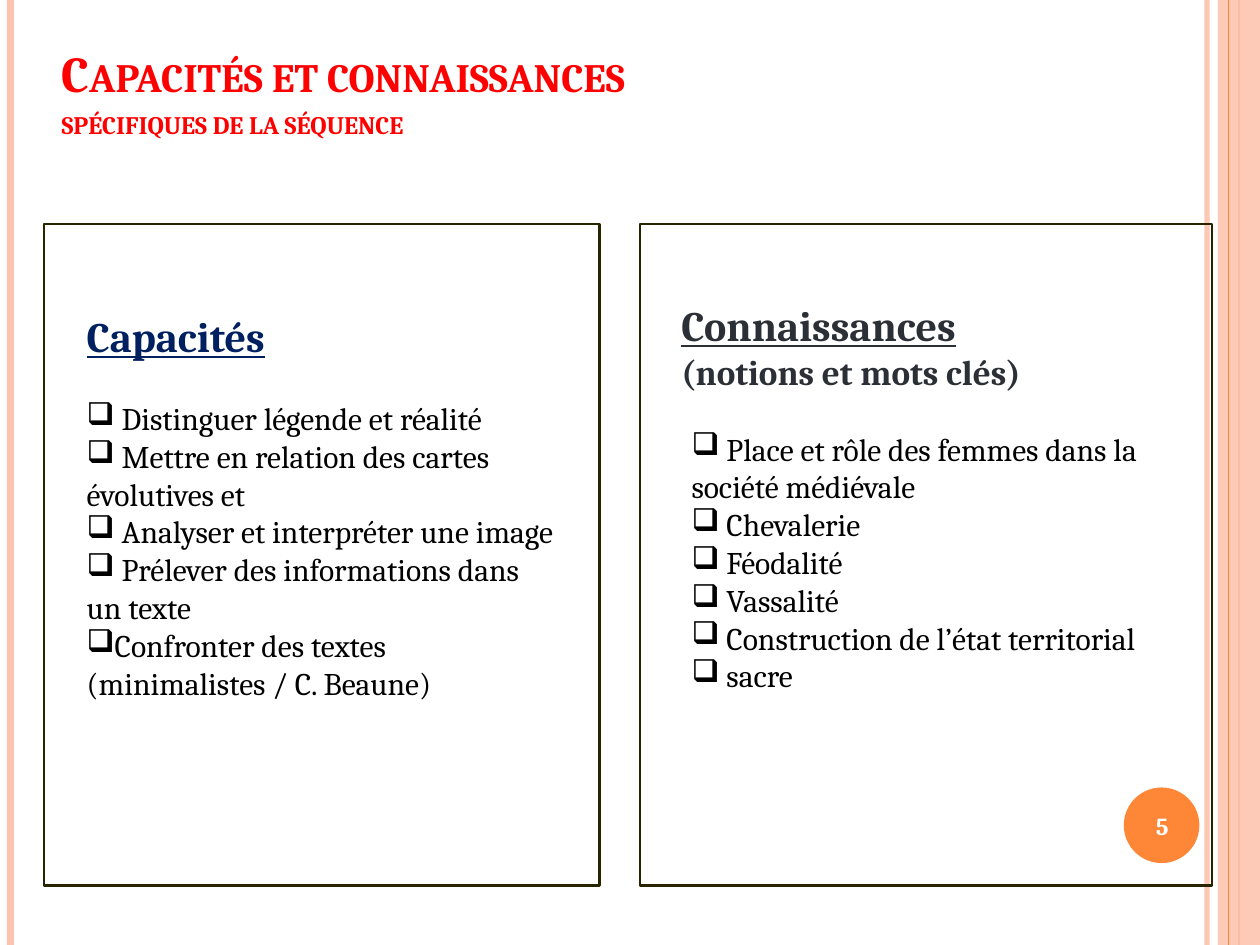
"""Build the slide on the skills and knowledge of a teaching sequence."""
from dataclasses import dataclass, field
from typing import NamedTuple, Optional

from lxml import etree
from pptx import Presentation
from pptx import util as u
from pptx.dml.color import RGBColor
from pptx.enum import shapes, text
from pptx.oxml.ns import qn


@dataclass(frozen=True)
class Theme:
    """Colours, font and type sizes of the slide."""
    family: str = "Cambria"
    peach: str = "FEC3AE"
    orange: str = "FE8637"
    frame: str = "292400"
    red: str = "FF0000"
    navy: str = "002060"
    slate: str = "2B2F36"
    black: str = "000000"
    white: str = "FFFFFF"
    title: float = 28.8
    heading: float = 24
    subheading: float = 20
    body: float = 18
    number: float = 14


class Box(NamedTuple):
    """Left, top, width and height in points."""
    left: float
    top: float
    width: float
    height: float


class Rule(NamedTuple):
    """A vertical rule over the full height."""
    x: float
    colour: str
    weight: float
    opacity: int = 100


class Line(NamedTuple):
    """A paragraph with its format."""
    words: str
    size: float
    colour: str
    bold: bool = False
    underline: bool = False
    small_caps: bool = False
    bullet: bool = False
    gap_after: float = 0


@dataclass(frozen=True)
class Passage:
    """A text box and its paragraphs."""
    box: Box
    lines: list[Line]
    frame: dict = field(default_factory=dict)
    align: Optional[text.PP_ALIGN] = None


THEME = Theme()
SLIDE = Box(0, 0, 720, 540)
PANEL_TOP, PANEL_HEIGHT = 128, 378

RULES = [
    Rule(689.8, THEME.peach, 3, 93),
    Rule(6, THEME.peach, 4.5),
    Rule(708, THEME.orange, 1.5),
]
INNER_RULE = Rule(702, THEME.orange, 0.75)
BAND = Box(696, 0, 24, SLIDE.height)
BADGE = Box(642.2, 450, 43.2, 43.2)
PANELS = [
    Box(25.2, PANEL_TOP, 317.5, PANEL_HEIGHT),
    Box(365.8, PANEL_TOP, 326.9, PANEL_HEIGHT),
]

SKILLS = [
    " Distinguer légende et réalité",
    " Mettre en relation des cartes évolutives et",
    " Analyser et interpréter une image",
    " Prélever des informations dans un texte",
    "Confronter des textes (minimalistes / C. Beaune)",
]
NOTIONS = [
    " Place et rôle des femmes dans la société médiévale",
    " Chevalerie",
    " Féodalité",
    " Vassalité",
    " Construction de l’état territorial",
    " sacre",
]


def bullets(items: list[str]) -> list[Line]:
    """Turn items into checklist lines."""
    return [Line(item, THEME.body, THEME.black, bullet=True) for item in items]


PASSAGES = [
    Passage(
        Box(28.1, 16.6, 648, 88.6),
        [
            Line("Capacités et connaissances", THEME.title, THEME.red, True, small_caps=True),
            Line("spécifiques de la séquence", THEME.body, THEME.red, True, small_caps=True),
        ],
        {"vertical_anchor": text.MSO_ANCHOR.BOTTOM, "margin_bottom": u.Pt(25)},
    ),
    Passage(
        Box(382.3, 167.8, 223.2, 60.5),
        [
            Line("Connaissances", THEME.heading, THEME.slate, True, True),
            Line("(notions et mots clés)", THEME.subheading, THEME.slate, True),
        ],
        {"word_wrap": False},
    ),
    Passage(Box(388.1, 241.9, 272.2, 181.4), bullets(NOTIONS)),
    Passage(
        Box(42.5, 174.2, 283.7, 254.2),
        [
            Line("Capacités", THEME.heading, THEME.navy, True, True, gap_after=21.5),
            *bullets(SKILLS),
        ],
    ),
    Passage(
        Box(640.1, 451.4, 48.2, 41),
        [Line("5", THEME.number, THEME.white, True)],
        {"vertical_anchor": text.MSO_ANCHOR.MIDDLE},
        text.PP_ALIGN.CENTER,
    ),
]


def points(box: Box) -> list[u.Pt]:
    """Convert a box to lengths."""
    return [u.Pt(value) for value in box]


def set_opacity(holder, percent: int) -> None:
    """Make the first colour below an element partly transparent."""
    colour = next(holder.iter(qn("a:srgbClr")))
    etree.SubElement(colour, qn("a:alpha"), val=str(percent * 1000))


def draw_rule(slide, rule: Rule) -> None:
    """Draw a vertical rule."""
    x = u.Pt(rule.x)
    stroke = slide.shapes.add_connector(
        shapes.MSO_CONNECTOR.STRAIGHT, x, u.Pt(0), x, u.Pt(SLIDE.height))
    stroke.line.width = u.Pt(rule.weight)
    stroke.line.color.rgb = RGBColor.from_string(rule.colour)
    properties = stroke._element.spPr
    if rule.opacity < 100:
        set_opacity(properties, rule.opacity)
    etree.SubElement(properties, qn("a:effectLst"))


def draw_area(slide, kind: shapes.MSO_SHAPE, box: Box, fill: str, opacity: int = 100) -> None:
    """Draw a filled area without an edge."""
    area = slide.shapes.add_shape(kind, *points(box))
    area.shadow.inherit = False
    area.line.fill.background()
    area.fill.solid()
    area.fill.fore_color.rgb = RGBColor.from_string(fill)
    if opacity < 100:
        set_opacity(area._element.spPr, opacity)


def draw_panel(slide, box: Box) -> None:
    """Draw an open frame."""
    panel = slide.shapes.add_shape(shapes.MSO_SHAPE.RECTANGLE, *points(box))
    panel.shadow.inherit = False
    panel.fill.background()
    panel.line.width = u.Pt(1.5)
    panel.line.color.rgb = RGBColor.from_string(THEME.frame)


def write_line(paragraph, line: Line) -> None:
    """Write one formatted paragraph."""
    run = paragraph.add_run()
    run.text = line.words
    formats = {"name": THEME.family, "size": u.Pt(line.size),
               "bold": line.bold, "underline": line.underline}
    for name, value in formats.items():
        setattr(run.font, name, value)
    run.font.color.rgb = RGBColor.from_string(line.colour)
    if line.small_caps:
        run._r.get_or_add_rPr().set("cap", "small")
    if line.gap_after:
        paragraph.space_after = u.Pt(line.gap_after)
    if line.bullet:
        etree.SubElement(paragraph._p.get_or_add_pPr(), qn("a:buChar"), char="❑")


def write_passage(slide, passage: Passage) -> None:
    """Write a text box."""
    frame = slide.shapes.add_textbox(*points(passage.box)).text_frame
    for name, value in ({"word_wrap": True} | passage.frame).items():
        setattr(frame, name, value)
    for index, line in enumerate(passage.lines):
        paragraph = frame.add_paragraph() if index else frame.paragraphs[0]
        paragraph.alignment = passage.align
        write_line(paragraph, line)


def main() -> None:
    """Build and save the slide."""
    deck = Presentation()
    deck.slide_width, deck.slide_height = u.Pt(SLIDE.width), u.Pt(SLIDE.height)
    slide = deck.slides.add_slide(deck.slide_layouts[6])
    for rule in RULES:
        draw_rule(slide, rule)
    draw_area(slide, shapes.MSO_SHAPE.RECTANGLE, BAND, THEME.peach, 87)
    draw_rule(slide, INNER_RULE)
    draw_area(slide, shapes.MSO_SHAPE.OVAL, BADGE, THEME.orange)
    for panel in PANELS:
        draw_panel(slide, panel)
    for passage in PASSAGES:
        write_passage(slide, passage)
    deck.save("out.pptx")


if __name__ == "__main__":
    main()
